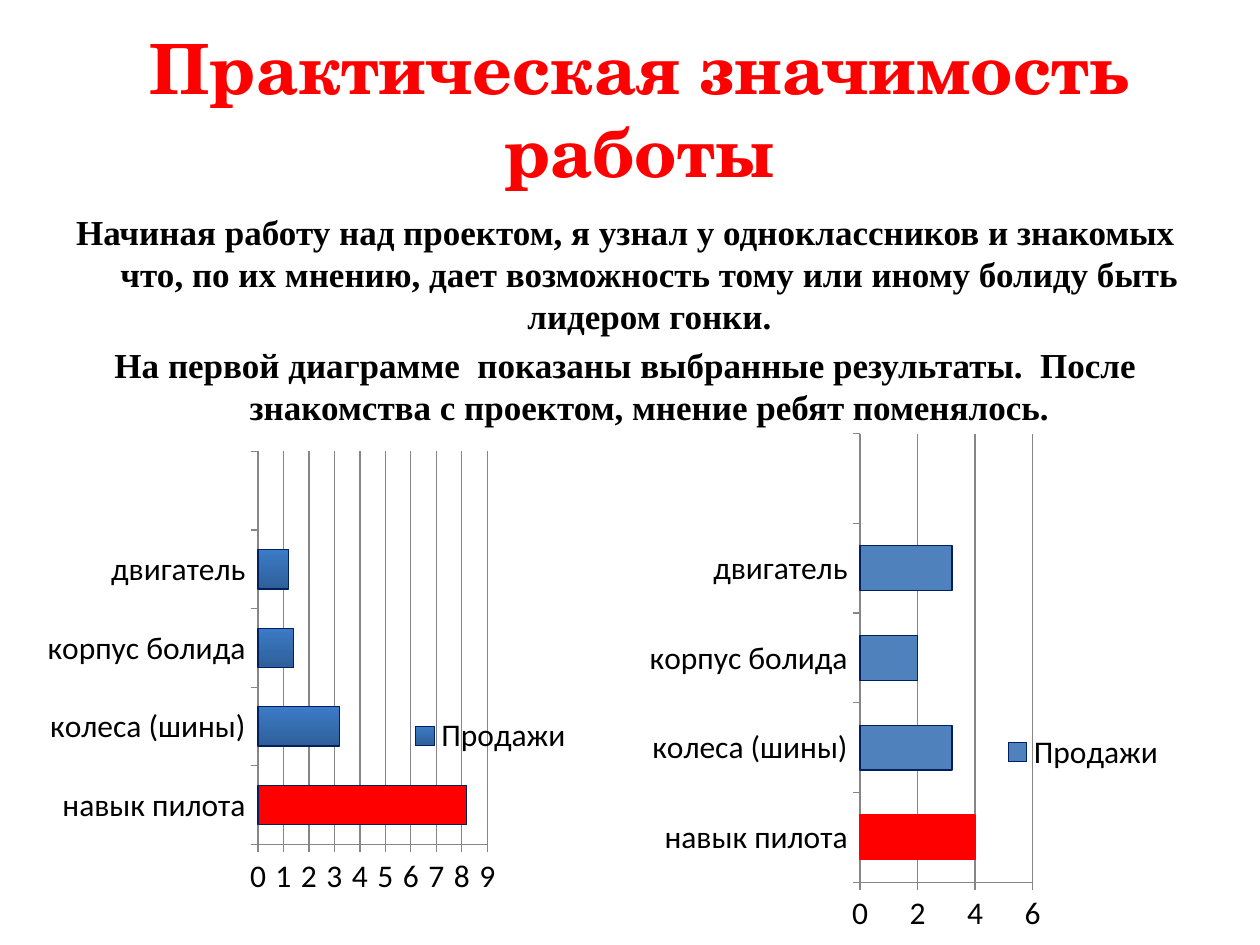
from dataclasses import dataclass

from lxml.etree import SubElement
from pptx import Presentation
from pptx.chart.data import CategoryChartData as Data
from pptx.dml.color import RGBColor
from pptx.enum.chart import XL_CHART_TYPE as Kind, XL_LEGEND_POSITION as Side
from pptx.enum.chart import XL_TICK_MARK as Tick
from pptx.enum.text import MSO_ANCHOR as Anchor, PP_ALIGN as Align
from pptx.oxml.ns import qn
from pptx.util import Inches, Pt

RED = RGBColor(0xFF, 0x00, 0x00)
BLACK = RGBColor(0x00, 0x00, 0x00)
BLUE = RGBColor(0x4F, 0x81, 0xBD)
LIGHT = RGBColor(0x3C, 0x7B, 0xC7)
DARK = RGBColor(0x2E, 0x5F, 0x99)
NAVY = RGBColor(0x00, 0x20, 0x60)
GRAY = RGBColor(0x86, 0x86, 0x86)

TITLE = "Практическая значимость работы"
BODY = (
    "Начиная работу над проектом, я узнал у одноклассников и знакомых что, "
    "по их мнению, дает возможность тому или иному болиду быть лидером гонки.",
    "На первой диаграмме  показаны выбранные результаты.  "
    "После знакомства с проектом, мнение ребят поменялось.",
)
CAUSES = ("навык пилота", "колеса (шины)", "корпус болида", "двигатель", "")

Box = tuple[float, float, float, float]


@dataclass
class Poll:
    box: Box
    votes: tuple
    plot: Box
    key: Box
    top: int
    step: int
    shaded: bool
    edge: RGBColor


POLLS = (
    Poll((0.28, 3.51, 5.2, 3.67), (8.2, 3.2, 1.4, 1.2, None),
         (0.34, 0.02, 0.35, 0.85), (0.57, 0.59, 0.25, 0.09), 9, 1, True, NAVY),
    Poll((5.08, 3.36, 4.72, 4.14), (4, 3.2, 2, 3.2, None),
         (0.37, 0.02, 0.29, 0.86), (0.61, 0.59, 0.27, 0.08), 6, 2, False, RED),
)


def add_text(slide, box: Box, lines: tuple, face: str, size: float, color: RGBColor):
    frame = slide.shapes.add_textbox(*map(Inches, box)).text_frame
    frame.word_wrap = True
    for i, line in enumerate(lines):
        para = frame.paragraphs[0] if i == 0 else frame.add_paragraph()
        para.text = line
        para.alignment = Align.CENTER
        font = para.font
        font.name, font.size, font.bold = face, Pt(size), True
        font.color.rgb = color
    return frame


def place(node, box: Box, inner: bool) -> None:
    layout = node.get_or_add_layout() if hasattr(node, "get_or_add_layout") else node.find(qn("c:layout"))
    if layout is None:
        layout = SubElement(node, qn("c:layout"))
        node.remove(layout)
        spot = 1 if node.find(qn("c:legendPos")) is not None else 0
        node.insert(spot, layout)
    for old in list(layout):
        layout.remove(old)
    manual = SubElement(layout, qn("c:manualLayout"))
    parts = [("layoutTarget", "inner")] if inner else []
    parts += [("xMode", "edge"), ("yMode", "edge")]
    parts += zip("xywh", map(str, box))
    for name, val in parts:
        SubElement(manual, qn(f"c:{name}")).set("val", val)


def draw_line(line, color: RGBColor) -> None:
    line.color.rgb = color
    line.width = Pt(0.75)


def add_poll(slide, poll: Poll) -> None:
    data = Data()
    data.categories = CAUSES
    data.add_series("Продажи", poll.votes)
    chart = slide.shapes.add_chart(
        Kind.BAR_CLUSTERED, *map(Inches, poll.box), data).chart
    chart.has_title = False
    chart.font.name, chart.font.size = "Calibri", Pt(18)
    chart.font.color.rgb = BLACK
    chart.has_legend = True
    chart.legend.position = Side.RIGHT
    chart.legend.include_in_layout = False

    for axis in (chart.category_axis, chart.value_axis):
        axis.major_tick_mark = Tick.OUTSIDE
        axis.minor_tick_mark = Tick.NONE
        draw_line(axis.format.line, GRAY)
    scale = chart.value_axis
    scale.minimum_scale, scale.maximum_scale = 0, poll.top
    scale.major_unit = poll.step
    scale.has_major_gridlines = True
    draw_line(scale.major_gridlines.format.line, GRAY)

    plot = chart.plots[0]
    plot.gap_width = 100
    plot.vary_by_categories = False
    bars = plot.series[0]
    bars.invert_if_negative = False
    fill = bars.format.fill
    if poll.shaded:
        fill.gradient()
        fill.gradient_angle = 270
        for stop, color in zip(fill.gradient_stops, (LIGHT, DARK)):
            stop.color.rgb = color
    else:
        fill.solid()
        fill.fore_color.rgb = BLUE
    draw_line(bars.format.line, NAVY)
    pilot = bars.points[0].format
    pilot.fill.solid()
    pilot.fill.fore_color.rgb = RED
    draw_line(pilot.line, poll.edge)

    area = chart.element.find(".//" + qn("c:plotArea"))
    place(area, poll.plot, True)
    place(chart.element.find(".//" + qn("c:legend")), poll.key, False)


def main() -> None:
    deck = Presentation()
    deck.slide_width, deck.slide_height = Inches(10), Inches(7.5)
    slide = deck.slides.add_slide(deck.slide_layouts[6])

    head = add_text(slide, (0.43, 0.6, 9.29, 1.1), (TITLE,),
                    "TeX Gyre Schola", 39.6, RED)
    head.vertical_anchor = Anchor.MIDDLE
    head.margin_bottom = Inches(0.63)

    body = add_text(slide, (0.43, 1.62, 9.07, 5.08), BODY,
                    "Times New Roman", 20, BLACK)
    for para in body.paragraphs:
        props = para._p.get_or_add_pPr()
        props.set("marL", str(Inches(0.38)))
        props.set("indent", str(-Inches(0.38)))
    body.paragraphs[1].space_before = Pt(4)

    for poll in POLLS:
        add_poll(slide, poll)
    deck.save("out.pptx")


if __name__ == "__main__":
    main()
